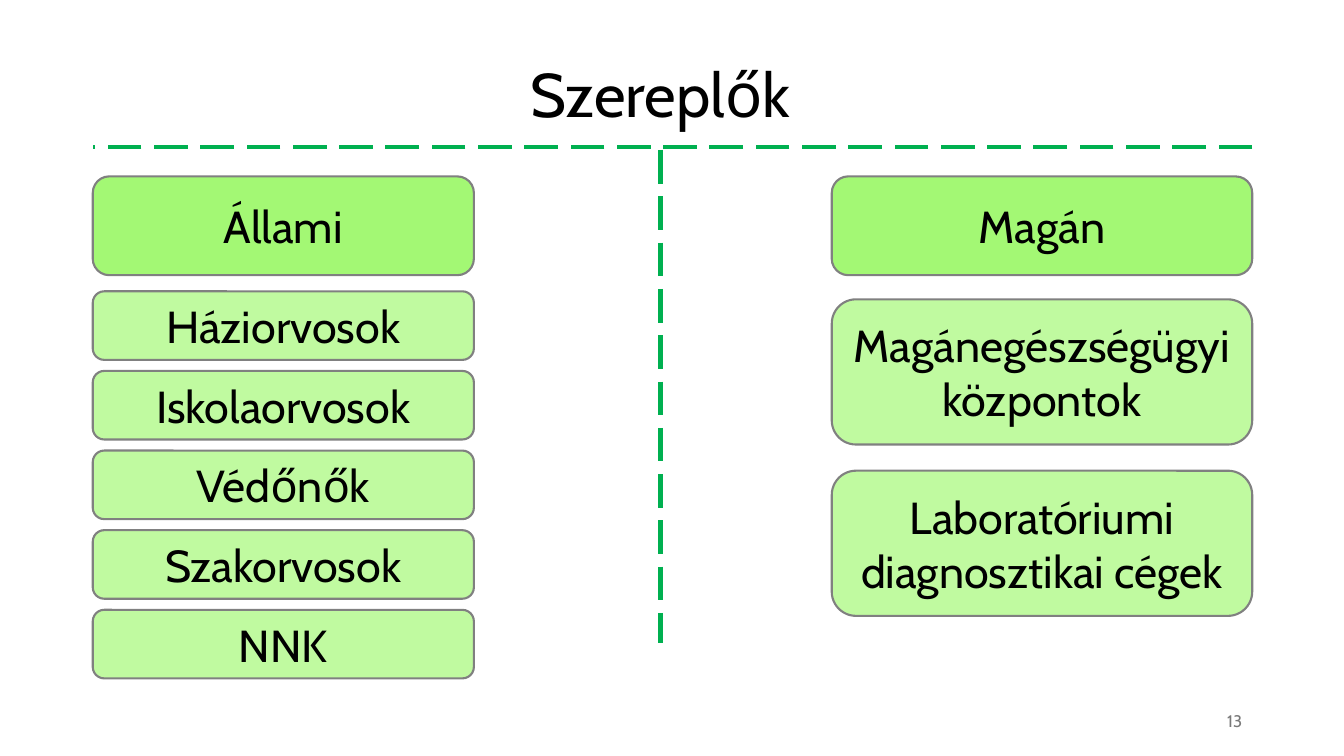
import pptx
import pptx.util
import pptx.dml.color
import pptx.enum.dml
import pptx.enum.shapes
import pptx.enum.text
from pptx.oxml.ns import qn
from lxml import etree

TITLE = "Szereplők"
PAGE_NUMBER = "13"
# Lengths in px, 100 px to the inch
SECTORS = [
    {"head": "Állami", "left": 92, "width": 378, "top": 289, "height": 68, "pitch": 79,
     "actors": ["Háziorvosok", "Iskolaorvosok", "Védőnők", "Szakorvosok", "NNK"]},
    {"head": "Magán", "left": 825, "width": 417, "top": 297, "height": 144, "pitch": 170,
     "actors": ["Magánegészségügyi központok", "Laboratóriumi diagnosztikai cégek"]},
]
HEAD_TOP, HEAD_HEIGHT = 175, 98
DIVIDERS = [(655, 149, 655, 638), (1242, 146, 92, 146)]
TITLE_BOX = (80, 24, 1150, 145)
NUMBER_BOX = (942, 695, 300, 40)
COLORS = {"head": "A3F874", "actor": "C0FAA0", "outline": "808080",
          "divider": "00B050", "text": "000000", "number": "797979"}
FONT = "Cabin"
ALIGN = pptx.enum.text.PP_ALIGN


def px(*lengths):
    return [pptx.util.Emu(length * 9144) for length in lengths]


def rgb(key):
    return pptx.dml.color.RGBColor.from_string(COLORS[key])


def write(shape, text, size, color="text", align=ALIGN.CENTER, spacing=1.0):
    frame = shape.text_frame
    frame.word_wrap = True
    frame.vertical_anchor = pptx.enum.text.MSO_ANCHOR.MIDDLE
    paragraph = frame.paragraphs[0]
    paragraph.alignment = align
    paragraph.line_spacing = spacing
    run = paragraph.add_run()
    run.text = text
    for name, value in {"name": FONT, "size": pptx.util.Pt(size), "bold": False}.items():
        setattr(run.font, name, value)
    run.font.color.rgb = rgb(color)


def add_card(slide, text, fill, box):
    card = slide.shapes.add_shape(pptx.enum.shapes.MSO_SHAPE.ROUNDED_RECTANGLE, *px(*box))
    card.shadow.inherit = False
    card.fill.solid()
    card.fill.fore_color.rgb = rgb(fill)
    card.line.color.rgb = rgb("outline")
    card.line.width = pptx.util.Pt(1.5)
    write(card, text, 32)


def add_divider(slide, ends):
    divider = slide.shapes.add_connector(pptx.enum.shapes.MSO_CONNECTOR.STRAIGHT, *px(*ends))
    divider.line.color.rgb = rgb("divider")
    divider.line.width = pptx.util.Pt(3)
    divider.line.dash_style = pptx.enum.dml.MSO_LINE.LONG_DASH
    etree.SubElement(divider._element.spPr, qn("a:effectLst"))


def main():
    deck = pptx.Presentation()
    deck.slide_width, deck.slide_height = px(1333, 750)
    slide = deck.slides.add_slide(deck.slide_layouts[5])

    title = slide.shapes.title
    title.left, title.top, title.width, title.height = px(*TITLE_BOX)
    write(title, TITLE, 44, spacing=0.9)

    for sector in SECTORS:
        left, width = sector["left"], sector["width"]
        add_card(slide, sector["head"], "head", (left, HEAD_TOP, width, HEAD_HEIGHT))
        for row, actor in enumerate(sector["actors"]):
            top = sector["top"] + row * sector["pitch"]
            add_card(slide, actor, "actor", (left, top, width, sector["height"]))

    number = slide.shapes.add_textbox(*px(*NUMBER_BOX))
    write(number, PAGE_NUMBER, 12, "number", ALIGN.RIGHT)

    for ends in DIVIDERS:
        add_divider(slide, ends)

    deck.save("out.pptx")


if __name__ == "__main__":
    main()
